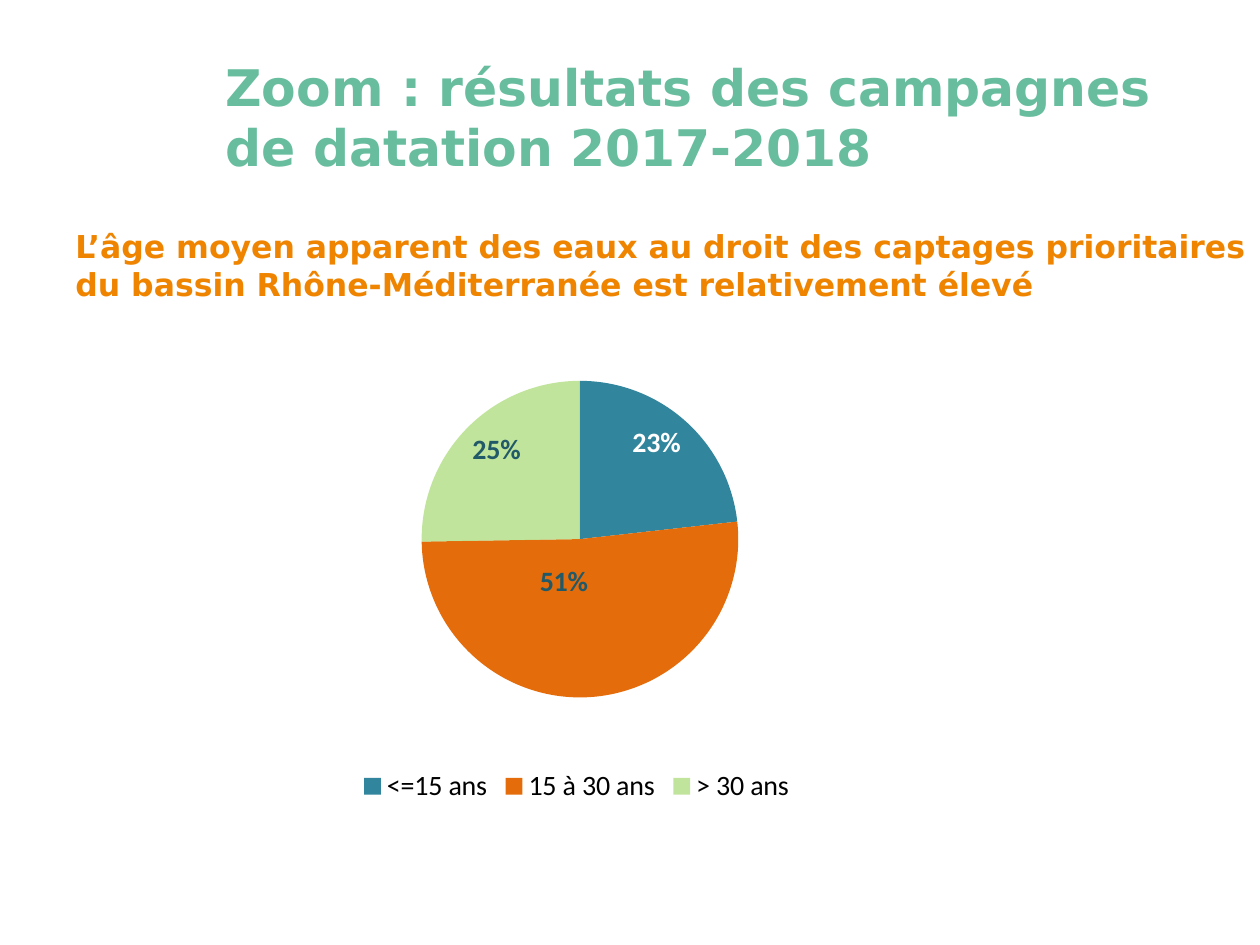
from dataclasses import dataclass

from lxml import etree
from pptx import Presentation
from pptx import util as u
from pptx.chart.data import CategoryChartData
from pptx.dml.color import RGBColor
from pptx.enum import chart as ch, text
from pptx.oxml import parse_xml
from pptx.oxml.ns import nsdecls, qn

EMU_PER_PX = 914400 / 126


@dataclass(frozen=True)
class Theme:
    heading_font: str = "DejaVu Sans"
    chart_font: str = "Calibri"
    title: str = "68BD9E"
    message: str = "EF8400"
    ink: str = "000000"
    label_light: str = "FFFFFF"
    label_dark: str = "215968"
    slices: tuple = (("31859C", 100), ("E46C0A", 100), ("92D050", 56))
    title_size: float = 28.8
    message_size: float = 18
    chart_size: float = 16


def px(n):
    return u.Emu(round(n * EMU_PER_PX))


def set_font(font, color, **values):
    for name, value in values.items():
        setattr(font, name, value)
    font.color.rgb = RGBColor.from_string(color)


def manual_layout(inner="", **values):
    """Chart layout in fractions of the chart area."""
    parts = inner + "".join(f'<c:{k} val="{v}"/>' for k, v in values.items())
    return parse_xml(f'<c:layout {nsdecls("c")}><c:manualLayout>{parts}'
                     '</c:manualLayout></c:layout>')


class Deck:
    def __init__(self, width, height, theme):
        self.theme = theme
        self.prs = Presentation()
        self.prs.slide_width, self.prs.slide_height = px(width), px(height)
        self.s = self.prs.slides.add_slide(self.prs.slide_layouts[6])

    def text(self, box, words, color, size, anchor):
        sp = self.s.shapes.add_textbox(*map(px, box))
        tf = sp.text_frame
        tf.word_wrap = True
        tf.vertical_anchor = anchor
        r = tf.paragraphs[0].add_run()
        r.text = words
        set_font(r.font, color, name=self.theme.heading_font,
                 size=u.Pt(size), bold=True)

    def pie(self, box, categories, values, label_colors, label_shifts):
        t = self.theme
        data = CategoryChartData(number_format="0%")
        data.categories = categories
        data.add_series("Series 1", values)
        chart = self.s.shapes.add_chart(
            ch.XL_CHART_TYPE.PIE, *map(px, box), data).chart
        chart.has_title = False
        size = u.Pt(t.chart_size)
        set_font(chart.font, t.ink, name=t.chart_font, size=size)

        # Legend under the pie
        chart.has_legend = True
        chart.legend.position = ch.XL_LEGEND_POSITION.BOTTOM
        chart.legend.include_in_layout = False
        set_font(chart.legend.font, t.ink, name=t.chart_font, size=size)

        # Plot area
        area = chart.plots[0]._element.getparent()
        for old in area.findall(qn("c:layout")):
            area.remove(old)
        area.insert(0, manual_layout(
            '<c:layoutTarget val="inner"/><c:xMode val="edge"/><c:yMode val="edge"/>',
            x=0.28, y=0.04, w=0.45, h=0.71))

        # Slices and their labels
        plot = chart.plots[0]
        plot.vary_by_categories = True
        series = plot.series[0]
        labels = series.data_labels
        formats = {"show_value": True, "show_percentage": False,
                   "number_format": "0%", "number_format_is_linked": False,
                   "position": ch.XL_LABEL_POSITION.INSIDE_END}
        for name, value in formats.items():
            setattr(labels, name, value)
        set_font(labels.font, t.label_light, name=t.chart_font, size=size, bold=True)
        for i, (color, opacity) in enumerate(t.slices):
            point = series.points[i]
            point.format.fill.solid()
            point.format.fill.fore_color.rgb = RGBColor.from_string(color)
            if opacity < 100:
                clr = point.format.fill._xPr.find(".//" + qn("a:srgbClr"))
                etree.SubElement(clr, qn("a:alpha")).set("val", str(opacity * 1000))
            if i in label_colors:
                label = point.data_label
                set_font(label.font, label_colors[i], name=t.chart_font,
                         size=size, bold=True)
                label.position = ch.XL_LABEL_POSITION.INSIDE_END
            if i in label_shifts:
                label.position = ch.XL_LABEL_POSITION.CENTER
                dx, dy = label_shifts[i]
                idx = labels._element.find(f'{qn("c:dLbl")}/{qn("c:idx")}[@val="{i}"]')
                idx.addnext(manual_layout(x=dx, y=dy))


def main():
    t = Theme()
    deck = Deck(1260, 945, t)

    # Title and key message
    deck.text((213, 38, 984, 157), "Zoom : résultats des campagnes de datation 2017-2018",
              t.title, t.title_size, text.MSO_ANCHOR.MIDDLE)
    deck.text((63, 221, 1197, 624),
              "L’âge moyen apparent des eaux au droit des captages prioritaires "
              "du bassin Rhône-Méditerranée est relativement élevé",
              t.message, t.message_size, text.MSO_ANCHOR.TOP)

    # Apparent age of the water
    deck.pie((223, 363, 707, 446), ("<=15 ans", "15 à 30 ans", "> 30 ans"),
             (0.23, 0.51, 0.25),
             label_colors={1: t.label_dark, 2: t.label_dark},
             label_shifts={1: (-0.03, -0.08)})

    deck.prs.save("out.pptx")


if __name__ == "__main__":
    main()
